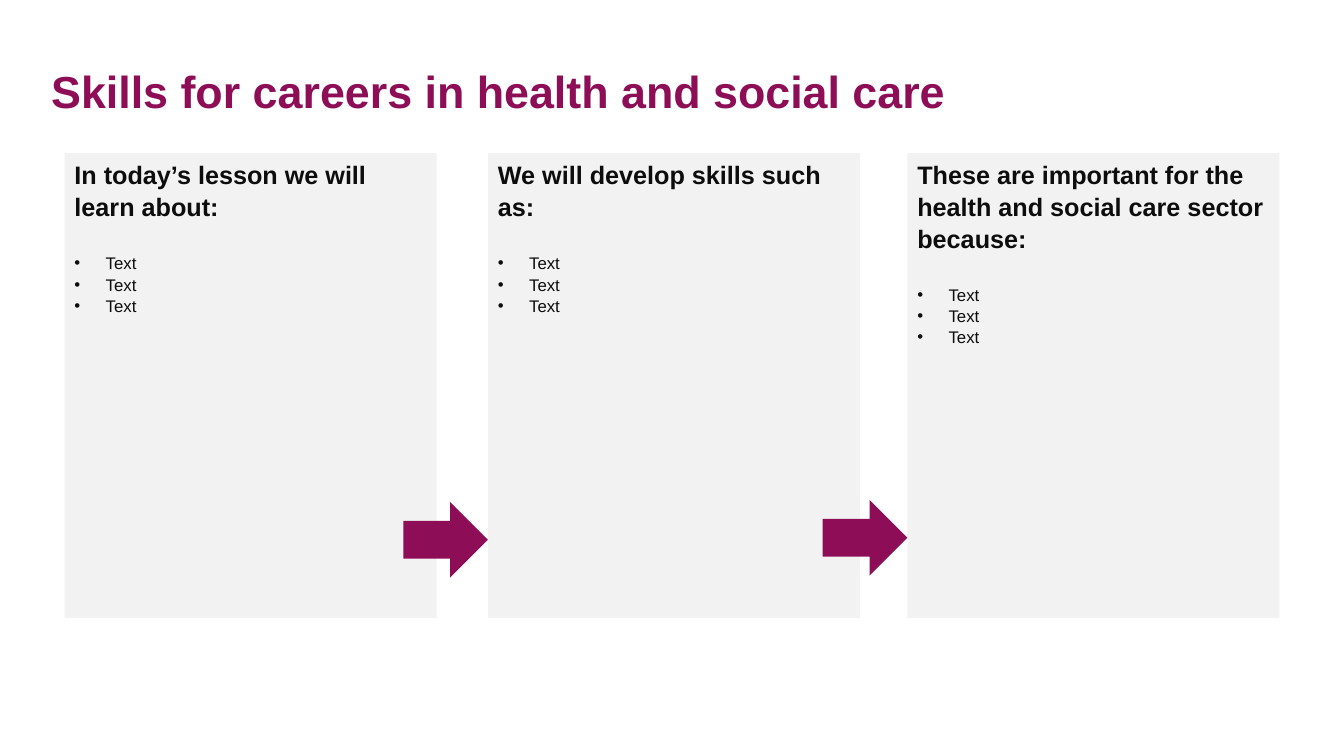
from dataclasses import dataclass

from lxml import etree
from pptx import Presentation
from pptx import util as u
from pptx.dml import color
from pptx.enum import shapes, text
from pptx.oxml import ns


@dataclass(frozen=True)
class Theme:
    font: str = "Arial"
    plum: str = "8D0E57"
    ink: str = "0D0D0D"
    panel: str = "F2F2F2"
    title: float = 32
    head: float = 18
    body: float = 12
    gap: float = 21.7
    lead: float = 1.05


@dataclass(frozen=True)
class Panel:
    left: float
    head: str
    items: tuple[str, ...] = ("Text", "Text", "Text")


@dataclass(frozen=True)
class Arrow:
    tip: float
    top: float


THEME = Theme()
TOP, WIDTH, HEIGHT = 1.52, 3.69, 4.61
INDENT = u.Inches(0.31)
PANELS = (
    Panel(0.64, "In today’s lesson we will learn about:"),
    Panel(4.84, "We will develop skills such as:"),
    Panel(9, "These are important for the health and social care sector because:"),
)
# Each arrow points at the left edge of the next panel
ARROWS = (Arrow(PANELS[1].left, 4.98), Arrow(PANELS[2].left, 4.96))


def add_run(para, words: str, size: float, tint: str, bold: bool = False) -> None:
    run = para.add_run()
    run.text = words
    font = run.font
    font.name, font.size, font.bold = THEME.font, u.Pt(size), bold
    font.color.rgb = color.RGBColor.from_string(tint)


def add_block(slide, kind, left: float, top: float, width: float,
              height: float, fill: str):
    block = slide.shapes.add_shape(
        kind, u.Inches(left), u.Inches(top), u.Inches(width), u.Inches(height))
    block.shadow.inherit = False
    block.fill.solid()
    block.fill.fore_color.rgb = color.RGBColor.from_string(fill)
    block.line.fill.background()
    return block


def set_bullet(para) -> None:
    props = para._p.get_or_add_pPr()
    props.set("marL", str(INDENT))
    props.set("indent", str(-INDENT))
    font = etree.SubElement(props, ns.qn("a:buFont"))
    font.set("typeface", THEME.font)
    etree.SubElement(props, ns.qn("a:buChar")).set("char", "•")


def draw_panel(slide, panel: Panel) -> None:
    block = add_block(slide, shapes.MSO_SHAPE.RECTANGLE, panel.left, TOP,
                      WIDTH, HEIGHT, THEME.panel)
    frame = block.text_frame
    frame.word_wrap = True
    frame.vertical_anchor = text.MSO_ANCHOR.TOP
    head = frame.paragraphs[0]
    add_run(head, panel.head, THEME.head, THEME.ink, bold=True)
    for index, item in enumerate(panel.items):
        para = frame.add_paragraph()
        set_bullet(para)
        if index == 0:
            para.space_before = u.Pt(THEME.gap)
        add_run(para, item, THEME.body, THEME.ink)
    for para in frame.paragraphs:
        para.alignment = text.PP_ALIGN.LEFT
        para.line_spacing = THEME.lead


def draw_arrow(slide, arrow: Arrow) -> None:
    width = 0.84
    add_block(slide, shapes.MSO_SHAPE.RIGHT_ARROW, arrow.tip - width,
              arrow.top, width, 0.75, THEME.plum)


def draw_title(slide, words: str) -> None:
    box = slide.shapes.add_textbox(
        u.Inches(0.41), u.Inches(0.21), u.Inches(11.74), u.Inches(1.45))
    frame = box.text_frame
    frame.word_wrap = True
    frame.vertical_anchor = text.MSO_ANCHOR.MIDDLE
    para = frame.paragraphs[0]
    para.line_spacing = 0.9
    add_run(para, words, THEME.title, THEME.plum, bold=True)


def main() -> None:
    deck = Presentation()
    deck.slide_width, deck.slide_height = u.Inches(13.33), u.Inches(7.5)
    slide = deck.slides.add_slide(deck.slide_layouts[6])
    # Three text panels
    for panel in PANELS:
        draw_panel(slide, panel)
    # Arrows between panels
    for arrow in ARROWS:
        draw_arrow(slide, arrow)
    # Heading
    draw_title(slide, "Skills for careers in health and social care")
    deck.save("out.pptx")


if __name__ == "__main__":
    main()
